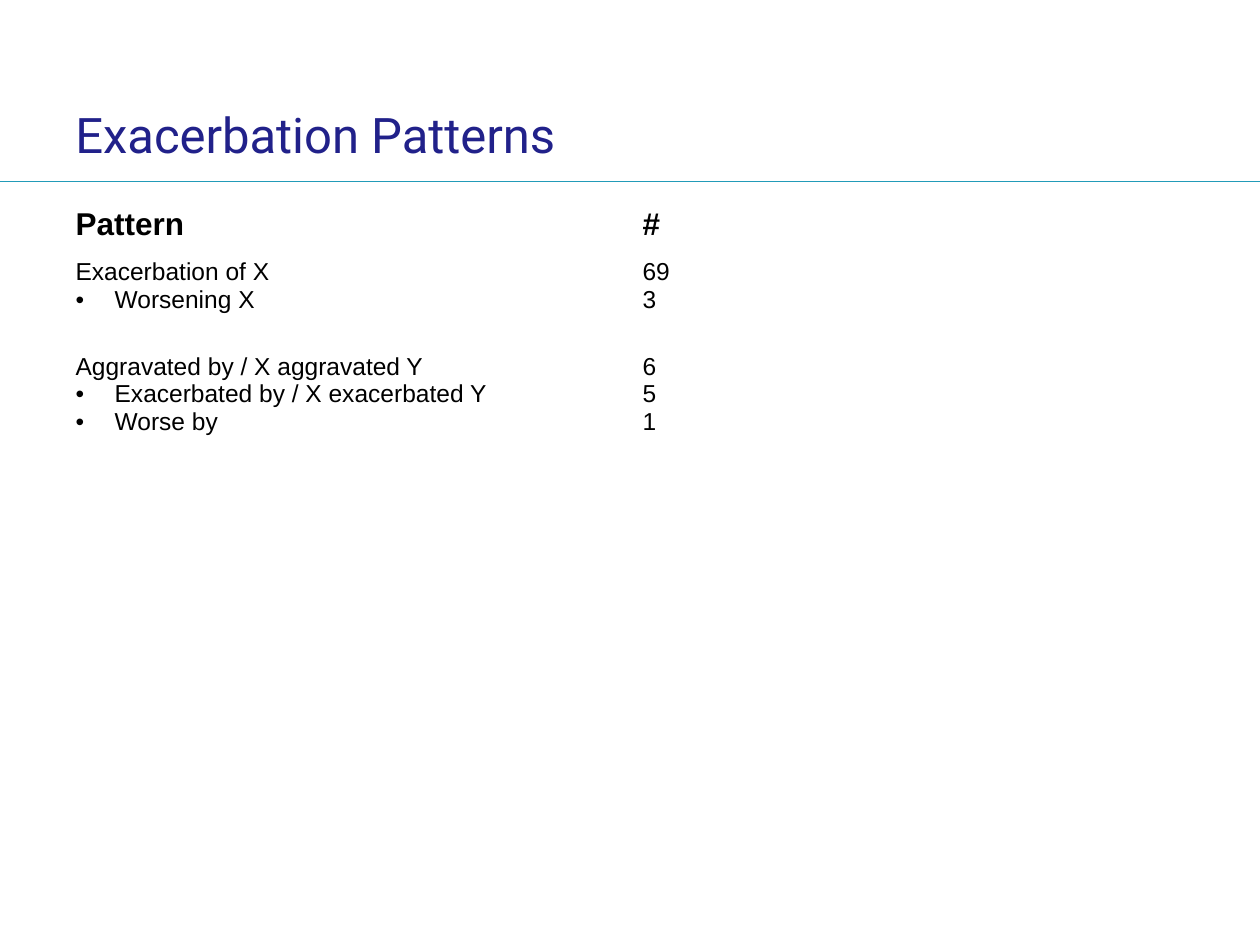
"""Build the Exacerbation Patterns slide with its table of pattern counts."""
from lxml import etree
from pptx import Presentation
from pptx import util as u
from pptx.dml.color import RGBColor
from pptx.enum import shapes, text
from pptx.oxml.ns import qn

COLORS = {"title": "21218A", "rule": "229BB8", "text": "000000"}
TITLE = "Exacerbation Patterns"
HEADER = ("Pattern", "#")
GROUPS = [
    [("Exacerbation of X", 69), ("Worsening X", 3)],
    [("Aggravated by / X aggravated Y", 6),
     ("Exacerbated by / X exacerbated Y", 5),
     ("Worse by", 1)],
]
ROW_HEIGHTS = (0.41, 0.75, 0.77)
COL_WIDTH = 4.5
INDENT = 0.31


def style(p, size, color, font, bold=False):
    for r in p.runs:
        r.font.size = u.Pt(size)
        r.font.name = font
        r.font.bold = bold
        r.font.color.rgb = RGBColor.from_string(COLORS[color])


def add_bullet(p):
    pPr = p._p.get_or_add_pPr()
    pPr.set("marL", str(u.Inches(INDENT)))
    pPr.set("indent", str(-u.Inches(INDENT)))
    etree.SubElement(pPr, qn("a:buFont")).set("typeface", "Arial")
    etree.SubElement(pPr, qn("a:buChar")).set("char", "•")


def fill_cell(cell, lines, size, bold=False, bulleted=False):
    cell.fill.background()
    tf = cell.text_frame
    tf.text = "\n".join(lines)
    for i, p in enumerate(tf.paragraphs):
        if bulleted and i:
            add_bullet(p)
        style(p, size, "text", "Arial", bold)


def add_rule(s):
    rule = s.shapes.add_connector(shapes.MSO_CONNECTOR.STRAIGHT, u.Inches(10),
                                  u.Inches(1.44), 0, u.Inches(1.44))
    rule.line.color.rgb = RGBColor.from_string(COLORS["rule"])
    rule.line.width = u.Pt(0.75)
    etree.SubElement(rule._element.spPr, qn("a:effectLst"))


def add_pattern_table(s):
    table = s.shapes.add_table(len(GROUPS) + 1, len(HEADER), u.Inches(0.5), u.Inches(1.59),
                               u.Inches(COL_WIDTH * len(HEADER)),
                               u.Inches(sum(ROW_HEIGHTS))).table
    table.first_row = table.horz_banding = False
    tbl_pr = table._tbl.tblPr
    tbl_pr.find(qn("a:tableStyleId")).text = "{2D5ABB26-0587-4C30-8999-92F81FD0307C}"
    for row, height in zip(table.rows, ROW_HEIGHTS):
        row.height = u.Inches(height)
    for col, label in enumerate(HEADER):
        fill_cell(table.cell(0, col), [label], 18, bold=True)
        for row, group in enumerate(GROUPS, 1):
            lines = [str(entry[col]) for entry in group]
            fill_cell(table.cell(row, col), lines, 14, bulleted=col == 0)


def add_title(s):
    sp = s.shapes.add_textbox(u.Inches(0.5), u.Inches(0.78), u.Inches(7.21), u.Inches(0.56))
    tf = sp.text_frame
    tf.word_wrap = True
    tf.vertical_anchor = text.MSO_ANCHOR.MIDDLE
    tf.margin_left = tf.margin_right = tf.margin_top = tf.margin_bottom = u.Inches(0.1)
    tf.text = TITLE
    style(tf.paragraphs[0], 28, "title", "Roboto")


def main():
    prs = Presentation()
    prs.slide_width, prs.slide_height = u.Inches(10), u.Inches(7.5)
    s = prs.slides.add_slide(prs.slide_layouts[6])
    add_rule(s)
    add_pattern_table(s)
    add_title(s)
    prs.save("out.pptx")


if __name__ == "__main__":
    main()
